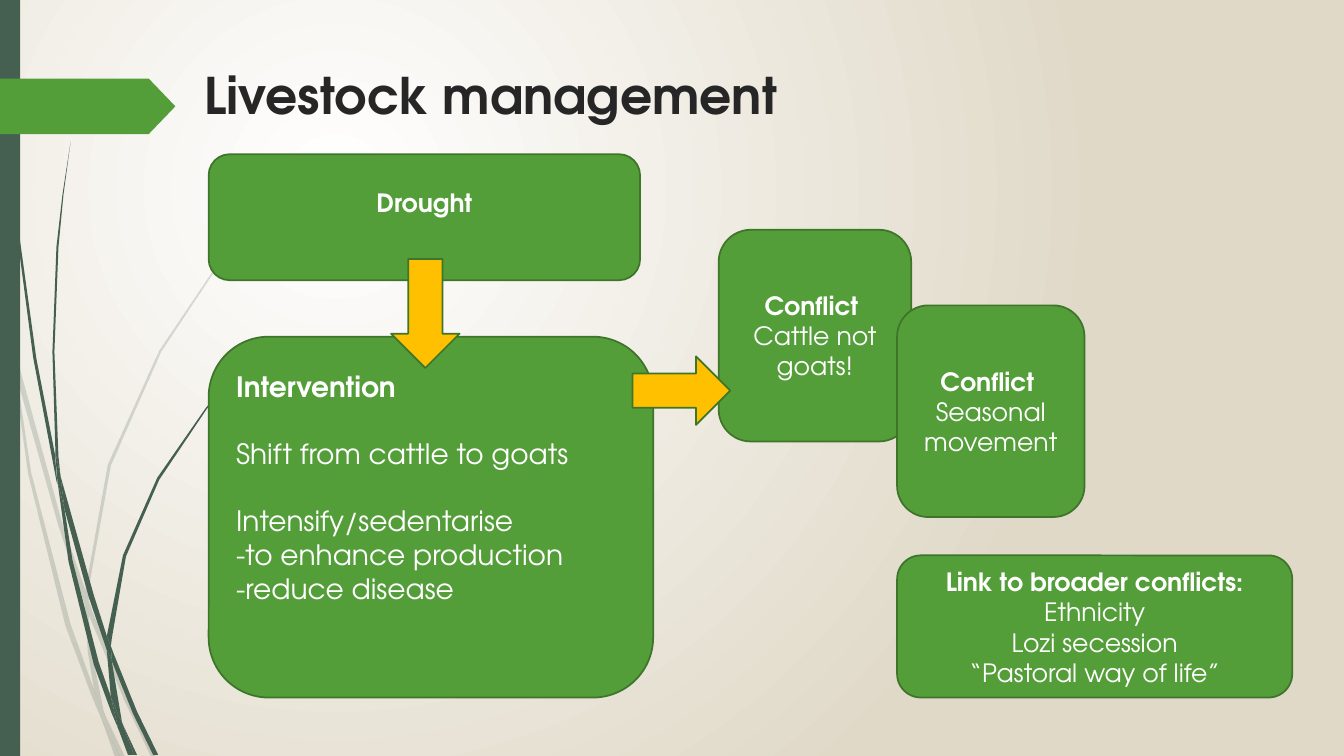
from pptx import Presentation
from pptx.dml.color import RGBColor
from pptx.enum.shapes import MSO_SHAPE
from pptx.enum.text import MSO_ANCHOR, PP_ALIGN
from pptx.oxml.ns import qn
from pptx.oxml.xmlchemy import OxmlElement
from pptx.util import Pt

PX = 9144  # EMU per pixel, 100 pixels to the inch
FONT = "TeX Gyre Adventor"
GREEN, DARK_GREEN, EDGE, AMBER = "549E39", "455F51", "3E752A", "FFC000"


def color(hex_string):
    return RGBColor.from_string(hex_string)


def paint(shape, fill, line=None):
    shape.shadow.inherit = False
    shape.fill.solid()
    shape.fill.fore_color.rgb = color(fill)
    if line:
        shape.line.color.rgb = color(line)
        shape.line.width = Pt(1.25)
    else:
        shape.line.fill.background()


presentation = Presentation()
presentation.slide_width = 12192000
presentation.slide_height = 750 * PX
slide = presentation.slides.add_slide(presentation.slide_layouts[6])
shapes = slide.shapes

# Background: radial glow around the upper left
fill = slide.background.fill
fill.gradient()
for stop, stop_color in zip(fill.gradient_stops, ("FFFFFF", "E0D9C8")):
    stop.color.rgb = color(stop_color)
gradient = slide.element.find(".//" + qn("a:gradFill"))
gradient.remove(gradient.find(qn("a:lin")))
glow = OxmlElement("a:path")
glow.set("path", "circle")
focus = OxmlElement("a:fillToRect")
for side, share in zip("ltrb", (50000, 50000, 100000, 100000)):
    focus.set(side, str(share))
glow.append(focus)
gradient.append(glow)

# Grass: outlines of the blade sections, pale blades behind dark ones
pale_blades = [
    [(11, 350), (9, 322), (0, 282), (0, 299), (10, 344)],
    [(58, 522), (84, 599), (85, 586), (62, 520), (14, 345), (17, 376)],
    [(92, 607), (88, 596), (88, 610), (123, 694), (150, 751), (155, 751), (127, 692)],
    [(119, 751), (124, 751), (105, 711)],
    [(93, 683), (70, 619), (31, 469), (17, 376), (11, 350), (28, 470), (65, 621),
     (92, 693), (101, 714), (99, 707)],
    [(84, 599), (87, 646), (93, 683), (96, 692), (105, 711), (103, 706), (91, 646),
     (88, 610), (88, 608)],
    [(88, 584), (110, 462), (160, 349), (229, 245), (268, 198), (290, 175), (312, 154),
     (312, 153), (289, 175), (268, 197), (228, 244), (158, 348), (107, 461), (85, 584),
     (85, 586), (88, 596)],
    [(101, 714), (114, 751), (119, 751)],
    [(88, 608), (88, 610), (88, 596), (85, 586), (84, 599)],
    [(96, 692), (93, 683), (99, 707), (101, 714), (119, 751), (105, 711)],
]
dark_blades = [
    [(7, 110), (17, 233), (33, 355), (56, 477), (57, 481), (55, 457), (55, 453),
     (36, 355), (19, 232), (8, 109), (5, 48), (4, 0), (3, 0), (4, 48)],
    [(88, 592), (106, 645), (106, 633), (106, 631), (93, 590), (60, 472), (64, 505)],
    [(113, 649), (110, 641), (111, 656), (132, 708), (152, 749), (157, 749), (136, 706)],
    [(110, 691), (98, 657), (72, 556), (64, 505), (57, 477), (68, 557), (93, 659),
     (111, 708), (117, 722), (116, 717)],
    [(60, 472), (58, 453), (54, 349), (58, 245), (63, 193), (70, 141), (62, 193),
     (56, 245), (52, 349), (55, 449)],
    [(133, 749), (136, 749), (122, 719)],
    [(57, 477), (64, 505), (60, 472), (55, 449), (55, 453)],
    [(111, 633), (125, 552), (158, 476), (205, 406), (231, 374), (245, 359), (261, 344),
     (260, 344), (245, 358), (231, 373), (204, 405), (156, 474), (122, 551), (106, 631),
     (110, 641)],
    [(117, 722), (127, 749), (131, 749)],
    [(106, 645), (110, 691), (116, 706), (122, 719), (121, 716), (111, 656), (109, 651)],
    [(106, 645), (109, 651), (111, 656), (110, 641), (106, 631), (106, 633)],
    [(116, 706), (110, 691), (116, 717), (117, 722), (130, 749), (133, 749), (122, 719)],
]
for blades, opacity in ((pale_blades, 20), (dark_blades, 100)):
    for outline in blades:
        builder = shapes.build_freeform(*outline[0], scale=PX)
        builder.add_line_segments(outline[1:], close=True)
        blade = builder.convert_to_shape()
        paint(blade, DARK_GREEN)
        if opacity < 100:
            alpha = OxmlElement("a:alpha")
            alpha.set("val", str(opacity * 1000))
            blade.element.spPr.find(qn("a:solidFill"))[0].append(alpha)

# Side bar and title tag
side_bar = shapes.add_shape(MSO_SHAPE.RECTANGLE, 0, 0, 20 * PX, 750 * PX)
paint(side_bar, DARK_GREEN)
tag = shapes.add_shape(MSO_SHAPE.PENTAGON, 0, 78 * PX, 174 * PX, 55 * PX)
tag.adjustments[0] = 0.48
paint(tag, GREEN)

# Title
title = shapes.add_textbox(193 * PX, 60 * PX, 975 * PX, 87 * PX)
title.text_frame.word_wrap = True
title.text_frame.margin_top = 4 * PX
paragraph = title.text_frame.paragraphs[0]
paragraph.text = "Livestock management"
paragraph.font.name = FONT
paragraph.font.size = Pt(36)
paragraph.font.bold = True
paragraph.font.color.rgb = color("262626")

# Boxes: place, text size, alignment, anchor, top and bottom inset,
# lines as (text, space before); the first line is the bold heading
CENTER, LEFT = PP_ALIGN.CENTER, PP_ALIGN.LEFT
MIDDLE, TOP = MSO_ANCHOR.MIDDLE, MSO_ANCHOR.TOP
boxes = [
    ((207, 153, 428, 125), 18, CENTER, MIDDLE, 0, 29, [("Drought", 0)]),
    ((207, 334, 441, 358), 20, LEFT, TOP, 15, 5, [
        ("Intervention", 0), ("Shift from cattle to goats", 24),
        ("Intensify/sedentarise", 24), ("-to enhance production", 0),
        ("-reduce disease", 0)]),
    ((713, 228, 191, 210), 18, CENTER, MIDDLE, 5, 5, [
        ("Conflict ", 0), ("Cattle not goats!", 0)]),
    ((890, 303, 186, 210), 18, CENTER, MIDDLE, 5, 5, [
        ("Conflict ", 0), ("Seasonal movement", 0)]),
    ((890, 551, 392, 141), 18, CENTER, MIDDLE, 1, 0, [
        ("Link to broader conflicts:", 0), ("Ethnicity", 0),
        ("Lozi secession", 0), ("“Pastoral way of life”", 0)]),
]
for place, size, alignment, anchor, top, bottom, lines in boxes:
    box = shapes.add_shape(MSO_SHAPE.ROUNDED_RECTANGLE, *(v * PX for v in place))
    paint(box, GREEN, EDGE)
    frame = box.text_frame
    frame.word_wrap = True
    frame.vertical_anchor = anchor
    frame.margin_top, frame.margin_bottom = top * PX, bottom * PX
    for i, (text, space) in enumerate(lines):
        paragraph = frame.add_paragraph() if i else frame.paragraphs[0]
        paragraph.text = text
        paragraph.alignment = alignment
        if space:
            paragraph.space_before = Pt(space)
        paragraph.font.name = FONT
        paragraph.font.size = Pt(size)
        paragraph.font.bold = i == 0
        paragraph.font.color.rgb = color("FFFFFF")

# Arrows from drought to intervention to conflict
down_arrow = shapes.add_shape(
    MSO_SHAPE.DOWN_ARROW, 388 * PX, 257 * PX, 68 * PX, 108 * PX)
side_arrow = shapes.add_shape(
    MSO_SHAPE.DOWN_ARROW, 642 * PX, 339 * PX, 68 * PX, 97 * PX)
side_arrow.rotation = 270
for arrow in (down_arrow, side_arrow):
    paint(arrow, AMBER, EDGE)

presentation.save("out.pptx")
